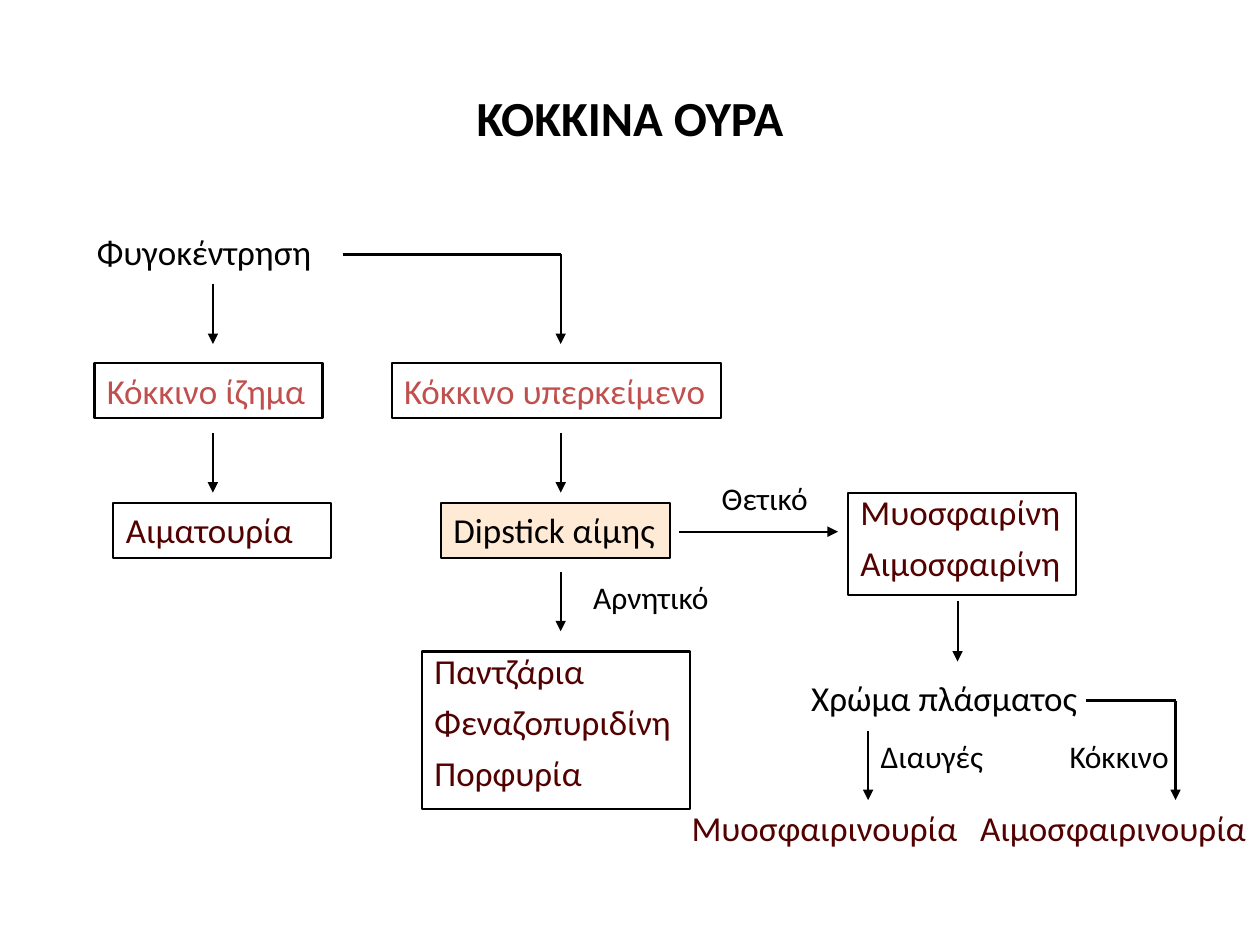
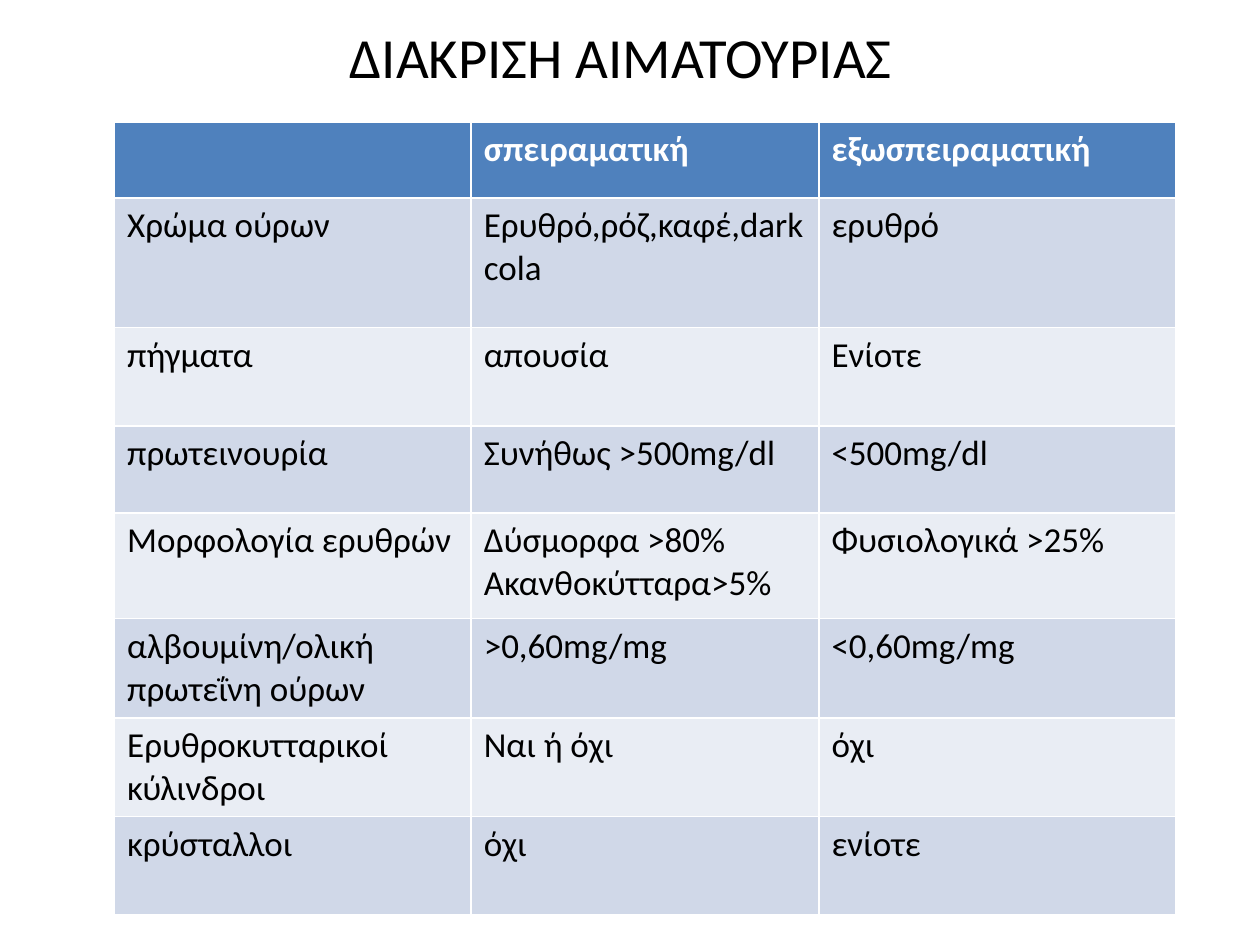
"""Builds two slides: a red-urine flowchart and a table of haematuria types."""
from dataclasses import dataclass

from lxml import etree
from pptx import Presentation
from pptx.dml.color import RGBColor
from pptx.enum import shapes, text
from pptx.oxml.ns import qn
from pptx.util import Inches, Pt


@dataclass(frozen=True)
class Theme:
    font: str = "Calibri"
    black: str = "000000"
    white: str = "FFFFFF"
    red: str = "C0504D"
    maroon: str = "520000"
    peach: str = "FFCC99"
    header: str = "4F81BD"
    bands: tuple = ("D0D8E8", "E9EDF4")
    body: float = 20
    label: float = 18
    line: float = 1.25


T = Theme()


def write(tf, content, size=T.body, color=T.black, bold=False, align=text.PP_ALIGN.LEFT,
          anchor=text.MSO_ANCHOR.TOP, spacing=None, before=0):
    tf.word_wrap = True
    tf.vertical_anchor = anchor
    for i, line in enumerate(content.split("\n")):
        p = tf.add_paragraph() if i else tf.paragraphs[0]
        p.alignment = align
        p.line_spacing = spacing
        p.space_before = Pt(before if i else 0)
        r = p.add_run()
        r.text = line
        r.font.name = T.font
        r.font.size = Pt(size)
        r.font.bold = bold
        r.font.color.rgb = RGBColor.from_string(color)


prs = Presentation()
prs.slide_width, prs.slide_height = Inches(10), Inches(7.5)

titles = [
    ("ΚΟΚΚΙΝΑ ΟΥΡΑ", (0.5, 0.3, 9, 1.25), 28, True),
    ("ΔΙΑΚΡΙΣΗ ΑΙΜΑΤΟΥΡΙΑΣ", (0.43, 0.13, 9, 0.63), 32.4, False),
]
for title, box, size, bold in titles:
    s = prs.slides.add_slide(prs.slide_layouts[6])
    sp = s.shapes.add_textbox(*map(Inches, box))
    write(sp.text_frame, title, size=size, bold=bold, align=text.PP_ALIGN.CENTER,
          anchor=text.MSO_ANCHOR.MIDDLE)
flow, comparison = prs.slides

boxes = [
    ("Κόκκινο ίζημα", (0.75, 2.88, 1.81, 0.44), T.red, None),
    ("Αιματουρία", (0.9, 3.99, 1.73, 0.44), T.maroon, None),
    ("Κόκκινο υπερκείμενο", (3.11, 2.88, 2.61, 0.44), T.red, None),
    ("Dipstick αίμης", (3.5, 3.99, 1.82, 0.44), T.black, T.peach),
    ("Παντζάρια\nΦεναζοπυριδίνη\nΠορφυρία", (3.35, 5.17, 2.13, 1.25), T.maroon, None),
    ("Μυοσφαιρίνη\nΑιμοσφαιρίνη", (6.73, 3.91, 1.81, 0.81), T.maroon, None),
]
for content, box, color, fill in boxes:
    sp = flow.shapes.add_shape(shapes.MSO_SHAPE.RECTANGLE, *map(Inches, box))
    sp.shadow.inherit = False
    sp.line.color.rgb = RGBColor.from_string(T.black)
    sp.line.width = Pt(T.line)
    if fill:
        sp.fill.solid()
        sp.fill.fore_color.rgb = RGBColor.from_string(fill)
        tint = sp.fill._xPr.find(qn("a:solidFill"))[0]
        etree.SubElement(tint, qn("a:alpha"), val="40000")
    else:
        sp.fill.background()
    write(sp.text_frame, content, color=color, before=T.body / 2,
          spacing=0.8 if "\n" in content else None)

labels = [
    ("Φυγοκέντρηση", (0.67, 1.78, 2.2, 0.44), T.body, T.black),
    ("Χρώμα πλάσματος", (6.34, 5.32, 2.44, 0.44), T.body, T.black),
    ("Μυοσφαιρινουρία", (5.39, 6.35, 2.6, 0.44), T.body, T.maroon),
    ("Αιμοσφαιρινουρία", (7.68, 6.35, 2.32, 0.44), T.body, T.maroon),
    ("Αρνητικό", (4.61, 4.54, 1.18, 0.4), T.label, T.black),
    ("Θετικό", (5.63, 3.75, 1.03, 0.4), T.label, T.black),
    ("Διαυγές", (6.89, 5.8, 1.03, 0.4), T.label, T.black),
    ("Κόκκινο", (8.39, 5.8, 1.03, 0.4), T.label, T.black),
]
for content, box, size, color in labels:
    sp = flow.shapes.add_textbox(*map(Inches, box))
    write(sp.text_frame, content, size=size, color=color)
    if content.startswith("Μυο"):
        sp.text_frame.paragraphs[0].alignment = text.PP_ALIGN.LEFT

sediment_x, supernatant_x, clear_x, red_x = 1.69, 4.45, 6.89, 9.33
lines = [
    (sediment_x, 2.25, sediment_x, 2.73, True),
    (sediment_x, 3.44, sediment_x, 3.91, True),
    (2.72, 2.02, supernatant_x, 2.02, False),
    (supernatant_x, 2.02, supernatant_x, 2.73, True),
    (supernatant_x, 3.44, supernatant_x, 3.91, True),
    (supernatant_x, 4.54, supernatant_x, 5.01, True),
    (5.39, 4.22, 6.65, 4.22, True),
    (7.6, 4.77, 7.6, 5.25, True),
    (clear_x, 5.8, clear_x, 6.35, True),
    (8.62, 5.56, red_x, 5.56, False),
    (red_x, 5.56, red_x, 6.35, True),
]
for *ends, arrow in lines:
    sp = flow.shapes.add_connector(shapes.MSO_CONNECTOR.STRAIGHT, *map(Inches, ends))
    sp.line.color.rgb = RGBColor.from_string(T.black)
    sp.line.width = Pt(T.line)
    if arrow:
        etree.SubElement(sp.line._get_or_add_ln(), qn("a:tailEnd"), type="triangle")
    etree.SubElement(sp._element.spPr, qn("a:effectLst"))

rows = [
    ("", "σπειραματική", "εξωσπειραματική"),
    ("Χρώμα ούρων", "Ερυθρό,ρόζ,καφέ,dark cola", "ερυθρό"),
    ("πήγματα", "απουσία", "Ενίοτε"),
    ("πρωτεινουρία", "Συνήθως >500mg/dl", "<500mg/dl"),
    ("Μορφολογία ερυθρών", "Δύσμορφα >80%\nΑκανθοκύτταρα>5%", "Φυσιολoγικά >25%"),
    ("αλβουμίνη/ολική πρωτεΐνη ούρων", ">0,60mg/mg", "<0,60mg/mg"),
    ("Ερυθροκυτταρικοί κύλινδροι", "Ναι ή όχι", "όχι"),
    ("κρύσταλλοι", "όχι", "ενίοτε"),
]
widths = (2.83, 2.76, 2.83)
heights = (0.6, 1.03, 0.78, 0.69, 0.84, 0.79, 0.78, 0.78)
table = comparison.shapes.add_table(len(rows), len(widths), Inches(0.91), Inches(0.97),
                                    Inches(sum(widths)), Inches(sum(heights))).table
for column, width in zip(table.columns, widths):
    column.width = Inches(width)
for i, (row, height) in enumerate(zip(rows, heights)):
    table.rows[i].height = Inches(height)
    for j, content in enumerate(row):
        cell = table.cell(i, j)
        cell.fill.solid()
        cell.fill.fore_color.rgb = RGBColor.from_string(T.bands[(i - 1) % 2] if i else T.header)
        if content:
            write(cell.text_frame, content, color=T.black if i else T.white, bold=i == 0)

prs.save("out.pptx")
